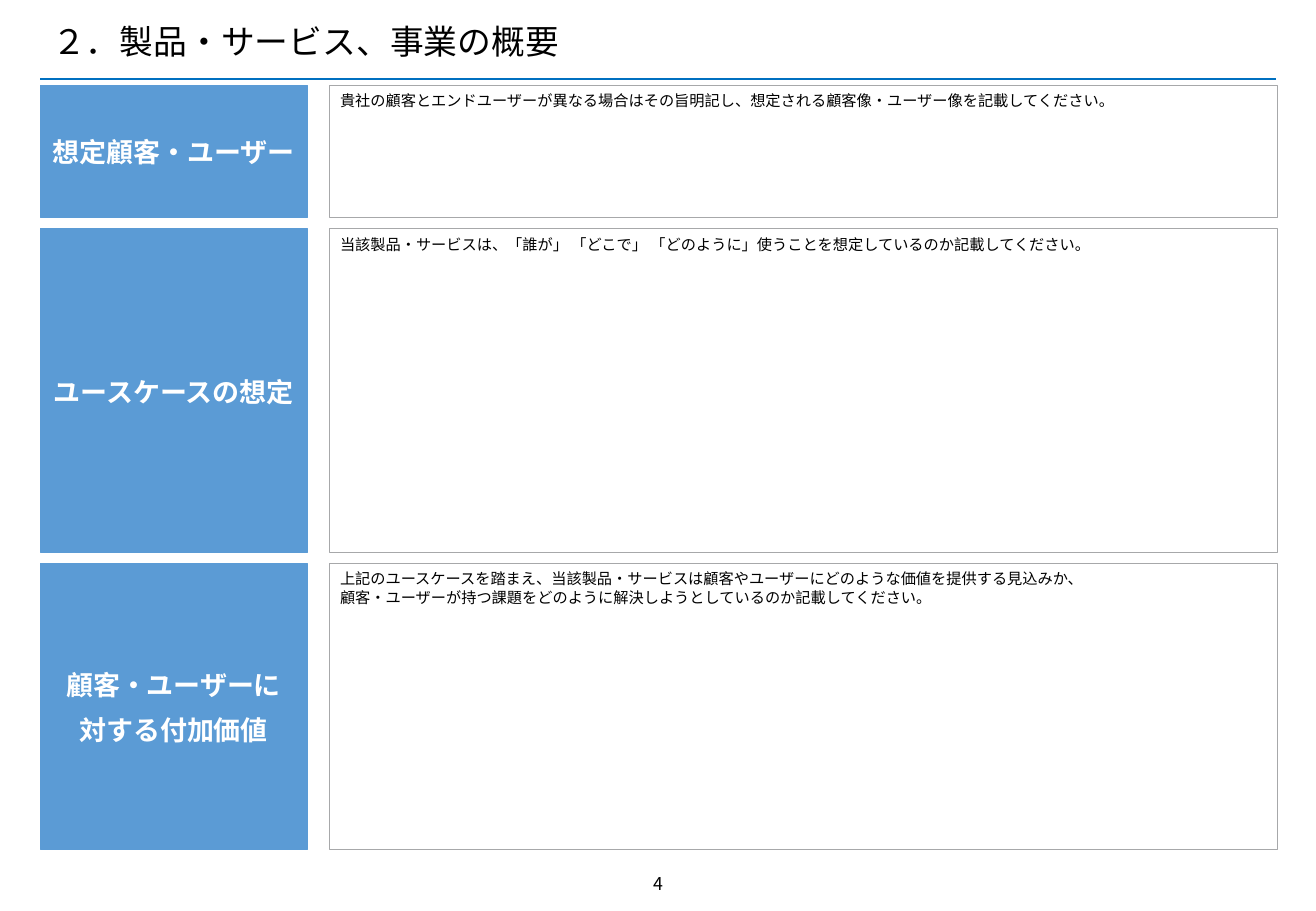
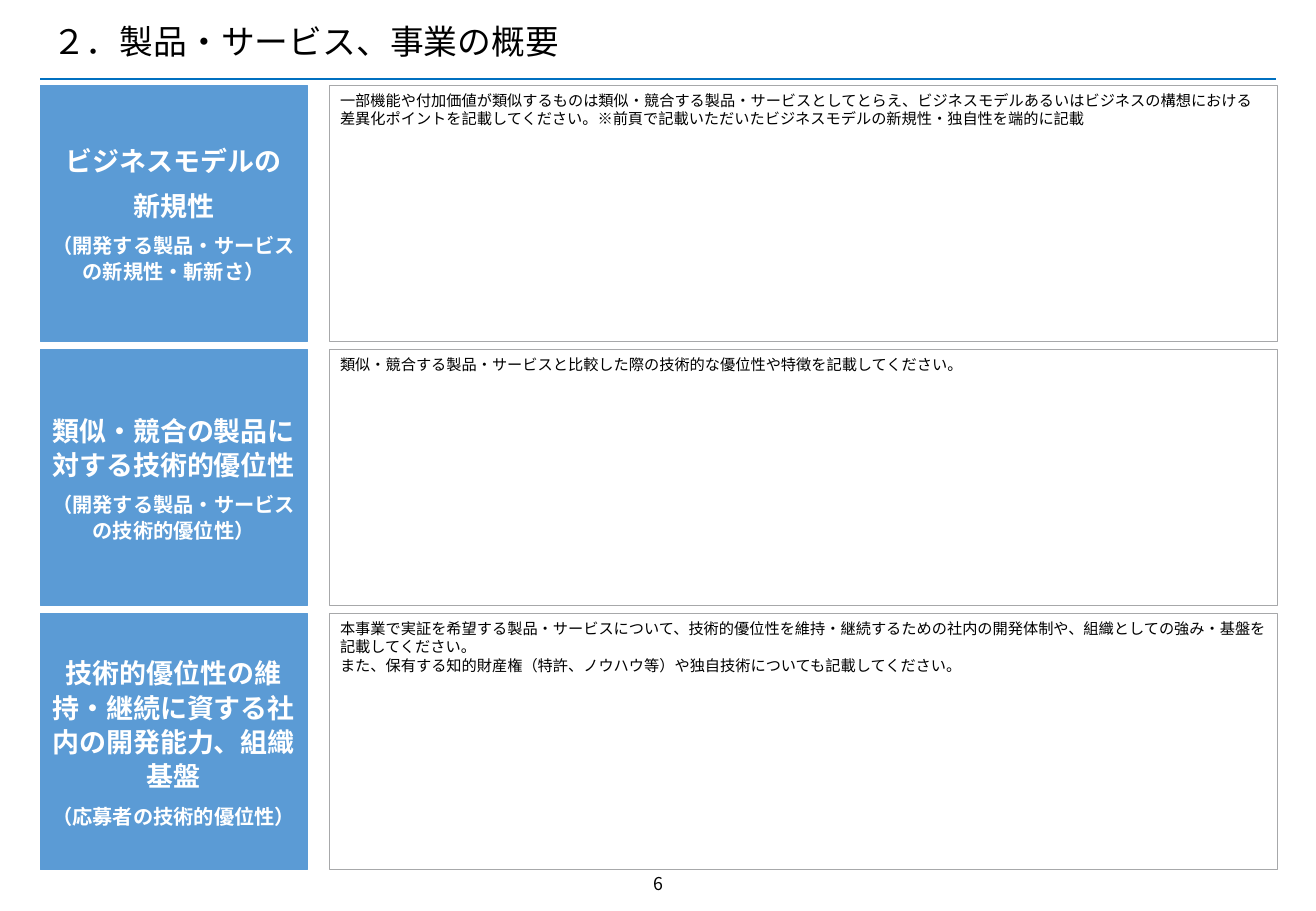
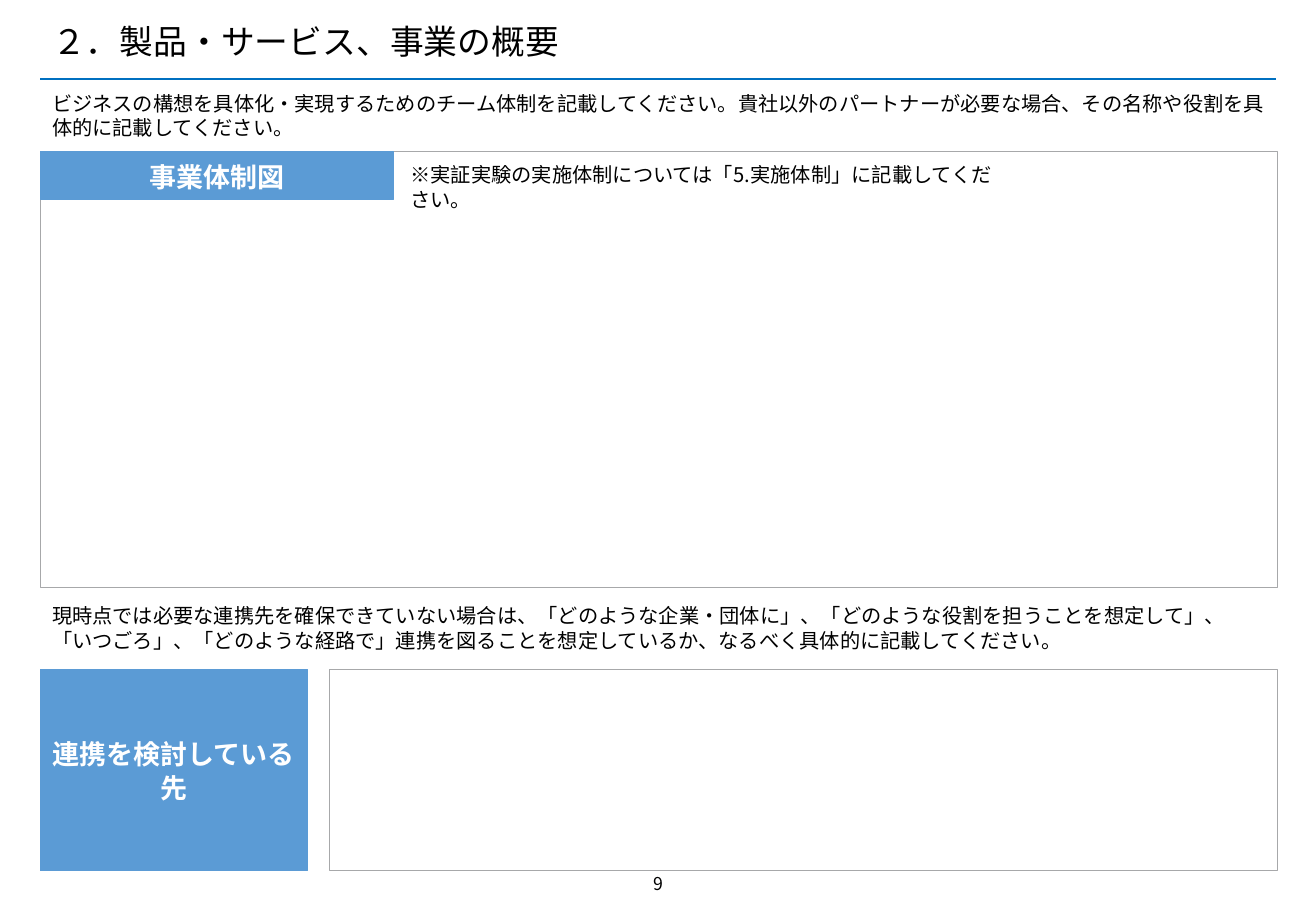
from dataclasses import dataclass
from lxml.etree import SubElement
from pptx import Presentation
from pptx.dml.color import RGBColor as Rgb
from pptx.enum.shapes import MSO_CONNECTOR as Conn, MSO_SHAPE as Shape
from pptx.enum.text import MSO_ANCHOR as Anchor, PP_ALIGN as Align
from pptx.oxml.ns import qn
from pptx.util import Emu, Pt


@dataclass(frozen=True)
class Theme:
    """Colours, font and type sizes of the deck."""
    font: str = "Noto Sans CJK JP"
    ink: str = "000000"
    white: str = "FFFFFF"
    blue: str = "5B9BD5"
    rule: str = "0070C0"
    edge: str = "A7A8AA"
    title: float = 20
    head: float = 16
    lead: float = 12
    page: float = 10.5
    note: float = 9


@dataclass(frozen=True)
class Box:
    """Area on the slide grid, which has 100 cells to the inch."""
    x: float
    y: float
    w: float
    h: float

    def area(self, x, y, w, h):
        """Return an area placed relative to this one."""
        return Box(self.x + x, self.y + y, w, h)

    def emu(self):
        """Return left, top, width and height as lengths."""
        return [cell(v) for v in (self.x, self.y, self.w, self.h)]


THEME = Theme()
PAGE = Box(0, 0, 1083, 750)
BODY = Box(33, 70, 1018, 647)
LABEL, SPLIT = 220, 238
TITLE = "２．製品・サービス、事業の概要"


def cell(count):
    """Turn grid cells into a length."""
    return Emu(int(count * 9144))


def put(obj, **vals):
    """Set each given attribute on an object."""
    for name, val in vals.items():
        setattr(obj, name, val)


def write(frame, lines, color=THEME.ink, bold=False, **style):
    """Fill a text frame with (text, size) lines."""
    for num, (text, size) in enumerate(lines):
        para = frame.add_paragraph() if num else frame.paragraphs[0]
        put(para, **style)
        if not num:
            para.space_before = Pt(0)
        run = para.add_run()
        run.text = text
        run.font.color.rgb = Rgb.from_string(color)
        put(run.font, size=Pt(size), bold=bold, name=THEME.font)
        SubElement(run._r.get_or_add_rPr(), qn("a:ea"), typeface=THEME.font)


def note(slide, box, lines, size, anchor=Anchor.TOP, **style):
    """Add a wrapped text box."""
    frame = slide.shapes.add_textbox(*box.emu()).text_frame
    put(frame, word_wrap=True, vertical_anchor=anchor)
    write(frame, [(text, size) for text in lines], **style)


def panel(slide, box, fill=THEME.white, edge=THEME.edge):
    """Add a flat rectangle with a thin edge."""
    rect = slide.shapes.add_shape(Shape.RECTANGLE, *box.emu())
    rect.shadow.inherit = False
    rect.fill.solid()
    rect.fill.fore_color.rgb = Rgb.from_string(fill)
    rect.line.color.rgb = Rgb.from_string(edge)
    rect.line.width = Pt(0.5)
    return rect


def label(slide, box, heads, sub=None):
    """Add a blue heading block with an optional smaller line."""
    frame = panel(slide, box, THEME.blue, THEME.blue).text_frame
    put(frame, word_wrap=True, vertical_anchor=Anchor.MIDDLE)
    put(frame, **{f"margin_{side}": cell(8)
                  for side in ("left", "top", "right", "bottom")})
    lines = [(text, THEME.head) for text in heads]
    if sub:
        lines.append((sub, THEME.lead))
    write(frame, lines, THEME.white, True, alignment=Align.CENTER,
          line_spacing=1.06, space_before=Pt(6))


def row(slide, box, heads, sub=None, text=(), wide=766):
    """Add a heading block beside an answer pane."""
    label(slide, box.area(0, 0, LABEL, box.h), heads, sub)
    panel(slide, box.area(SPLIT, 0, box.w - SPLIT, box.h))
    if text:
        note(slide, box.area(SPLIT - 1, 0, wide, 40), text, THEME.note)


def stack(slide, box, gap, rows):
    """Stack rows of given heights down a box."""
    top = 0
    for high, items in rows:
        row(slide, box.area(0, top, box.w, high), **items)
        top += high + gap


def team(slide, box):
    """Add the team chart area and the partner row."""
    note(slide, box.area(0, 0, 1033, 50), [
        "ビジネスの構想を具体化・実現するためのチーム体制を記載してください。"
        "貴社以外のパートナーが必要な場合、その名称や役割を具体的に記載してください。"], THEME.lead)
    chart = box.area(0, 55, box.w, 359)
    panel(slide, chart)
    label(slide, chart.area(0, 0, 291, 39), ["事業体制図"])
    note(slide, chart.area(295, 4, 508, 50), [
        "※実証実験の実施体制については「5.実施体制」に記載してください。"], THEME.lead)
    note(slide, box.area(0, 422, box.w, 50), [
        "現時点では必要な連携先を確保できていない場合は、「どのような企業・団体に」、"
        "「どのような役割を担うことを想定して」、「いつごろ」、「どのような経路で」"
        "連携を図ることを想定しているか、なるべく具体的に記載してください。"], THEME.lead)
    row(slide, box.area(0, 481, box.w, 166), ["連携を検討している先"])


def base(deck, page):
    """Add a slide with its title, rule and page number."""
    slide = deck.slides.add_slide(deck.slide_layouts[6])
    rule = slide.shapes.add_connector(
        Conn.STRAIGHT, cell(33), cell(65), cell(1050), cell(65))
    rule.line.color.rgb = Rgb.from_string(THEME.rule)
    rule.line.width = Pt(1)
    SubElement(rule._element.spPr, qn("a:effectLst"))
    note(slide, PAGE.area(33, 15, 934, 42), [TITLE], THEME.title,
         Anchor.MIDDLE, line_spacing=0.9)
    note(slide, PAGE.area(499, 714, 86, 29), [str(page)], THEME.page,
         alignment=Align.CENTER)
    return slide


USERS = [
    (109, dict(heads=["想定顧客・ユーザー"], text=[
        "貴社の顧客とエンドユーザーが異なる場合はその旨明記し、"
        "想定される顧客像・ユーザー像を記載してください。"])),
    (266, dict(heads=["ユースケースの想定"], text=[
        "当該製品・サービスは、「誰が」 「どこで」 「どのように」"
        "使うことを想定しているのか記載してください。"])),
    (235, dict(heads=["顧客・ユーザーに", "対する付加価値"], text=[
        "上記のユースケースを踏まえ、当該製品・サービスは顧客やユーザーに"
        "どのような価値を提供する見込みか、",
        "顧客・ユーザーが持つ課題をどのように解決しようとしているのか記載してください。"])),
]

EDGES = [
    (211, dict(
        heads=["ビジネスモデルの", "新規性"],
        sub="（開発する製品・サービスの新規性・斬新さ）", wide=780, text=[
            "一部機能や付加価値が類似するものは類似・競合する製品・サービスとしてとらえ、"
            "ビジネスモデルあるいはビジネスの構想における差異化ポイントを記載してください。"
            "※前頁で記載いただいたビジネスモデルの新規性・独自性を端的に記載"])),
    (211, dict(
        heads=["類似・競合の製品に対する技術的優位性"],
        sub="（開発する製品・サービスの技術的優位性）", text=[
            "類似・競合する製品・サービスと比較した際の"
            "技術的な優位性や特徴を記載してください。"])),
    (211, dict(
        heads=["技術的優位性の維持・継続に資する社内の開発能力、組織基盤"],
        sub="（応募者の技術的優位性）", wide=791, text=[
            "本事業で実証を希望する製品・サービスについて、技術的優位性を維持・継続するための"
            "社内の開発体制や、組織としての強み・基盤を記載してください。",
            "また、保有する知的財産権（特許、ノウハウ等）や独自技術についても記載してください。"])),
]


def main():
    """Build and save the deck."""
    deck = Presentation()
    put(deck, slide_width=cell(PAGE.w), slide_height=cell(PAGE.h))
    stack(base(deck, 4), BODY, 9.5, USERS)
    stack(base(deck, 6), BODY, 6.5, EDGES)
    team(base(deck, 9), BODY)
    deck.save("out.pptx")


if __name__ == "__main__":
    main()
